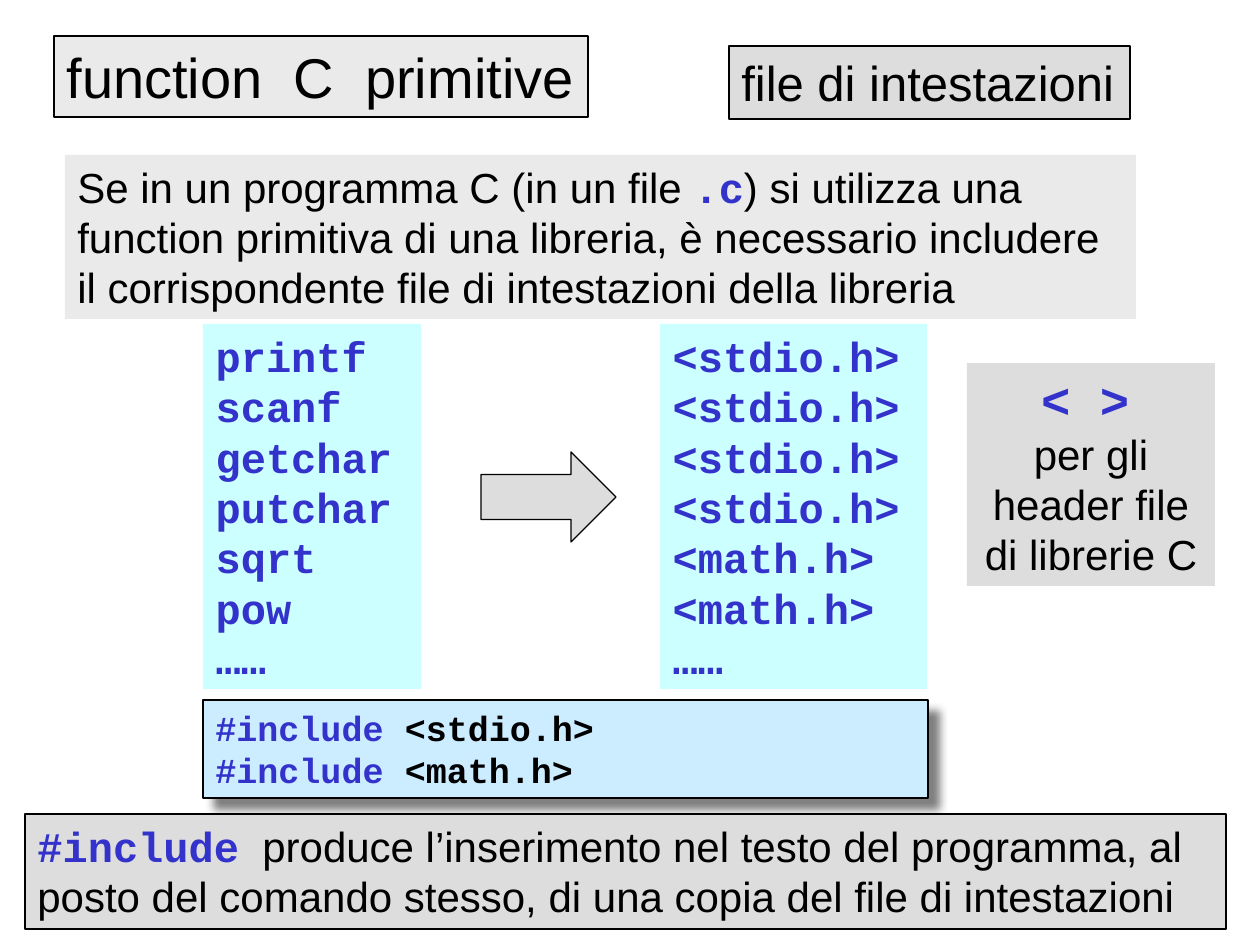
"""Slide on the header files that the primitive C functions need."""
from lxml import etree
from pptx import Presentation
from pptx import util as u
from pptx.dml.color import RGBColor
from pptx.enum import shapes, text
from pptx.oxml.ns import qn

PX = u.Inches(1) / 126
COLORS = {
    "ink": "000000",
    "code": "3333CC",
    "pale": "EAEAEA",
    "grey": "DDDDDD",
    "cyan": "CCFFFF",
    "sky": "CCECFF",
    "shadow": "808080",
}
PROSE = ("Arial", "ink", False)
CODE = ("Courier New", "code", True)
HEADER = ("Courier New", "ink", True)


def paint(panel, fill, outlined):
    panel.fill.solid()
    panel.fill.fore_color.rgb = RGBColor.from_string(COLORS[fill])
    if outlined:
        panel.line.color.rgb = RGBColor.from_string(COLORS["ink"])
        panel.line.width = u.Pt(0.75)


def write(paragraphs, box, holder=None, fill="grey", size=24, outlined=False, align="LEFT",
          wrap=True):
    left, top, width, height = [round(n * PX) for n in box]
    panel = holder or slide.shapes.add_textbox(left, top, width, height)
    panel.left, panel.top, panel.width, panel.height = left, top, width, height
    paint(panel, fill, outlined)
    frame = panel.text_frame
    frame.word_wrap = wrap
    frame.auto_size = text.MSO_AUTO_SIZE.NONE
    frame.vertical_anchor = text.MSO_ANCHOR.TOP
    for i, runs in enumerate(paragraphs):
        line = frame.add_paragraph() if i else frame.paragraphs[0]
        line.alignment = text.PP_ALIGN[align]
        line.space_before = u.Pt(0)
        if holder is not None:
            props = line._p.get_or_add_pPr()
            props.set("marL", "0")
            props.set("indent", "0")
            etree.SubElement(props, qn("a:buNone"))
        for words, (face, color, bold), *own_size in runs:
            run = line.add_run()
            run.text = words
            run.font.name = face
            run.font.size = u.Pt(own_size[0] if own_size else size)
            run.font.bold = bold
            run.font.color.rgb = RGBColor.from_string(COLORS[color])
    return panel


deck = Presentation()
deck.slide_width, deck.slide_height = round(1260 * PX), round(945 * PX)
slide = deck.slides.add_slide(deck.slide_layouts[3])
title, functions, headers = list(slide.placeholders)[:3]

write([[("function  C  primitive", PROSE)]], (54, 36, 534, 81),
      holder=title, fill="pale", size=32, outlined=True, wrap=False)
write([[("file di intestazioni", PROSE)]], (729, 46, 401, 73),
      size=28, outlined=True, wrap=False)
write([[("Se in un programma C (in un file ", PROSE), (".c", CODE),
        (") si utilizza una function primitiva di una libreria, è necessario includere "
         "il corrispondente file di intestazioni della libreria", PROSE)]],
      (65, 155, 1071, 164), fill="pale")

pairs = [("printf", "<stdio.h>"), ("scanf", "<stdio.h>"), ("getchar", "<stdio.h>"),
         ("putchar", "<stdio.h>"), ("sqrt", "<math.h>"), ("pow", "<math.h>"), ("……", "……")]
columns = [(functions, 203, 218), (headers, 660, 267)]
for names, (holder, left, width) in zip(zip(*pairs), columns):
    write([[(name, CODE)] for name in names], (left, 324, width, 365),
          holder=holder, fill="cyan")

arrow = slide.shapes.add_shape(shapes.MSO_SHAPE.RIGHT_ARROW,
                               *[round(n * PX) for n in (481, 452, 135, 90)])
arrow.shadow.inherit = False
paint(arrow, "grey", True)

example = write([[("#include", CODE), (f" <{name}.h>", HEADER)] for name in ("stdio", "math")],
                (203, 700, 725, 98), fill="sky", size=20, outlined=True)
effects = etree.SubElement(example._element.spPr, qn("a:effectLst"))
shade = etree.SubElement(effects, qn("a:outerShdw"), blurRad=str(u.Pt(5)),
                         dist=str(u.Pt(8.5)), dir="2700000", algn="tl", rotWithShape="0")
etree.SubElement(shade, qn("a:srgbClr"), val=COLORS["shadow"])

write([[("< >", CODE, 28), (" ", PROSE)], [("per gli header file di librerie C", PROSE)]],
      (967, 363, 248, 223), align="CENTER")
write([[("#include", CODE),
        ("  produce l’inserimento nel testo del programma, al posto del comando stesso, "
         "di una copia del file di intestazioni", PROSE)]],
      (25, 814, 1201, 115), outlined=True)

deck.save("out.pptx")
